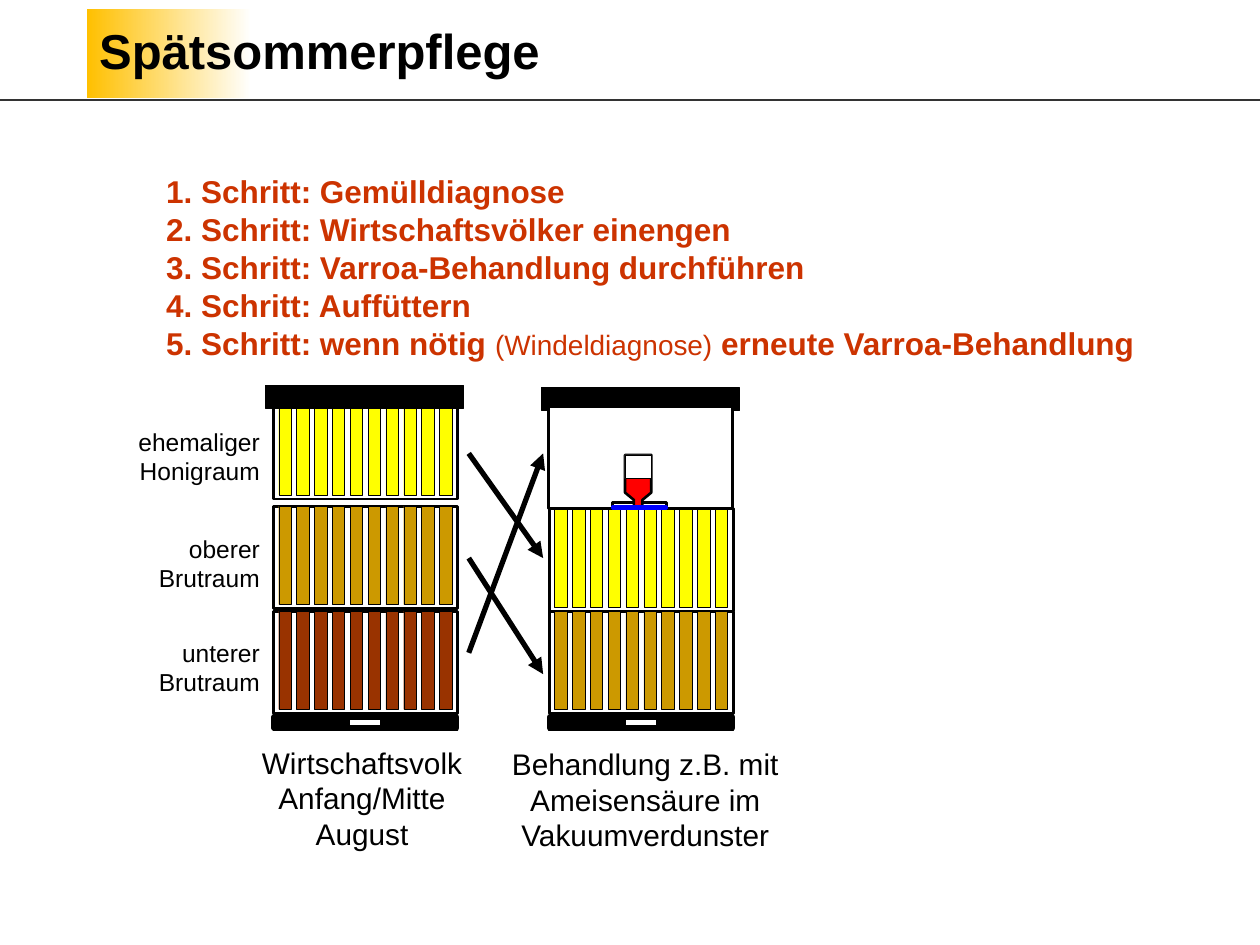
from lxml.etree import SubElement
from pptx import Presentation
from pptx.dml.color import RGBColor
from pptx.enum.shapes import MSO_CONNECTOR as Link, MSO_SHAPE as Shape
from pptx.enum.text import MSO_ANCHOR as Anchor, PP_ALIGN as Align
from pptx.oxml.ns import qn
from pptx.util import Cm, Pt

BLACK = RGBColor(0x00, 0x00, 0x00)
WHITE = RGBColor(0xFF, 0xFF, 0xFF)
GRAY = RGBColor(0x33, 0x33, 0x33)
GOLD = RGBColor(0xFF, 0xC0, 0x00)
RUST = RGBColor(0xCC, 0x33, 0x00)
YELLOW = RGBColor(0xFF, 0xFF, 0x00)
OCHRE = RGBColor(0xCC, 0x99, 0x00)
BROWN = RGBColor(0x99, 0x33, 0x00)
RED = RGBColor(0xFF, 0x00, 0x00)
BLUE = RGBColor(0x00, 0x00, 0xFF)

FONT = "Arial"
LEFT, RIGHT = 5.51, 11.07  # left edges of the two hives
BOX_W, BOX_H = 3.71, 2.06
FRAMES, PITCH = 10, 0.36

STEPS = [
    [("1. Schritt: Gemülldiagnose", 18, True)],
    [("2. Schritt: Wirtschaftsvölker einengen", 18, True)],
    [("3. Schritt: Varroa-Behandlung durchführen", 18, True)],
    [("4. Schritt: Auffüttern", 18, True)],
    [("5. Schritt: wenn nötig ", 18, True), ("(Windeldiagnose)", 16, False),
     (" erneute Varroa-Behandlung", 18, True)],
]
LABELS = [("ehemaliger Honigraum", 8.48), ("oberer Brutraum", 10.64),
          ("unterer Brutraum", 12.73)]
ARROWS = [(11.25, 13.59), (9.14, 11.25), (13.16, 9.14)]
BOTTLE = [(12.6, 9.17), (12.6, 9.93), (12.78, 10.08), (12.78, 10.24),
          (12.95, 10.24), (12.95, 10.08), (13.13, 9.93), (13.13, 9.17)]


def paint(shape, fill, line, width):
    shape.shadow.inherit = False
    if fill is None:
        shape.fill.background()
    else:
        shape.fill.solid()
        shape.fill.fore_color.rgb = fill
    shape.line.color.rgb = line
    shape.line.width = Pt(width)


def add_rect(slide, x, y, w, h, fill, line=BLACK, width=1.63):
    rect = slide.shapes.add_shape(Shape.RECTANGLE, Cm(x), Cm(y), Cm(w), Cm(h))
    paint(rect, fill, line, width)


def add_line(slide, x1, y1, x2, y2, color, width, arrow=False):
    line = slide.shapes.add_connector(
        Link.STRAIGHT, Cm(x1), Cm(y1), Cm(x2), Cm(y2))
    line.line.color.rgb = color
    line.line.width = Pt(width)
    if arrow:
        SubElement(line.line._get_or_add_ln(), qn("a:tailEnd"), type="triangle")
    SubElement(line._element.spPr, qn("a:effectLst"))


def add_text(slide, x, y, w, h, text, size, align):
    frame = slide.shapes.add_textbox(Cm(x), Cm(y), Cm(w), Cm(h)).text_frame
    frame.word_wrap = True
    par = frame.paragraphs[0]
    par.text = text
    par.alignment = align
    set_font(par.font, size, BLACK)


def set_font(font, size, color, bold=False):
    font.name = FONT
    font.size = Pt(size)
    font.bold = bold
    font.color.rgb = color


def add_title(slide):
    bar = slide.shapes.add_shape(
        Shape.RECTANGLE, Cm(1.75), Cm(0.18), Cm(20.77), Cm(1.8))
    bar.shadow.inherit = False
    bar.line.fill.background()
    bar.fill.gradient()
    bar.fill.gradient_angle = 0
    for stop, pos, color in zip(bar.fill.gradient_stops, (0, 0.16), (GOLD, WHITE)):
        stop.position = pos
        stop.color.rgb = color
    frame = bar.text_frame
    frame.vertical_anchor = Anchor.MIDDLE
    par = frame.paragraphs[0]
    par.text = "Spätsommerpflege"
    par.alignment = Align.LEFT
    par.line_spacing = 0.9
    set_font(par.font, 28, BLACK, True)


def add_steps(slide):
    box = slide.shapes.add_textbox(Cm(3.1), Cm(3.35), Cm(23.6), Cm(4.06))
    frame = box.text_frame
    frame.word_wrap = True
    for i, parts in enumerate(STEPS):
        par = frame.add_paragraph() if i else frame.paragraphs[0]
        props = par._p.get_or_add_pPr()
        props.set("marL", str(Cm(1.27)))
        props.set("indent", str(-Cm(1.27)))
        for text, size, bold in parts:
            run = par.add_run()
            run.text = text
            set_font(run.font, size, RUST, bold)


def add_combs(slide, x, y, color):
    """Draw one hive box with its row of frames."""
    add_rect(slide, x, y, BOX_W, BOX_H, WHITE)
    for i in range(FRAMES):
        add_rect(slide, x + 0.11 + i * PITCH, y, 0.25, 1.98, color, width=0.25)


def add_hive(slide, x, lid, boxes):
    add_rect(slide, x + 0.02, 14.45, 3.67, 0.23, WHITE, width=3.5)
    for shift in (0, 2.17):
        add_rect(slide, x + shift, 14.5, 1.54, 0.23, BLACK, width=0.88)
    for y, color in boxes:
        add_combs(slide, x, y, color)
    add_rect(slide, x - 0.15, lid, 3.99, 0.46, BLACK, width=0.63)


def add_vapor(slide):
    """Draw the empty box with the acid bottle on its tray."""
    add_rect(slide, 11.05, 8.2, BOX_W, BOX_H, WHITE)
    add_rect(slide, 12.34, 10.13, 1.09, 0.13, None)
    points = [(Cm(x), Cm(y)) for x, y in BOTTLE]
    build = slide.shapes.build_freeform(*points[0])
    build.add_line_segments(points[1:])
    paint(build.convert_to_shape(), RED, BLACK, 1.5)
    add_rect(slide, 12.6, 9.17, 0.53, 0.48, WHITE, width=0.38)
    add_rect(slide, 12.34, 10.21, 1.09, 0.05, RED, BLUE)


def main():
    deck = Presentation()
    deck.slide_width, deck.slide_height = Cm(25.4), Cm(19.05)
    slide = deck.slides.add_slide(deck.slide_layouts[6])

    add_line(slide, 0, 2.01, 25.4, 2.01, GRAY, 1)
    add_title(slide)
    add_steps(slide)
    for text, y in LABELS:
        add_text(slide, 2.09, y, 3.4, 1.45, text, 14, Align.RIGHT)

    add_hive(slide, LEFT, 7.77, [(12.32, BROWN), (10.21, OCHRE), (8, YELLOW)])
    add_hive(slide, RIGHT, 7.82, [(12.32, OCHRE), (10.26, YELLOW)])
    add_vapor(slide)
    for start, end in ARROWS:
        add_line(slide, 9.45, start, 10.95, end, BLACK, 3, arrow=True)

    add_text(slide, 4.9, 14.88, 4.8, 2.41,
             "Wirtschaftsvolk Anfang/Mitte August", 17, Align.CENTER)
    add_text(slide, 9.91, 14.91, 6.2, 2.41,
             "Behandlung z.B. mit Ameisensäure im Vakuumverdunster", 17, Align.CENTER)
    deck.save("out.pptx")


if __name__ == "__main__":
    main()
